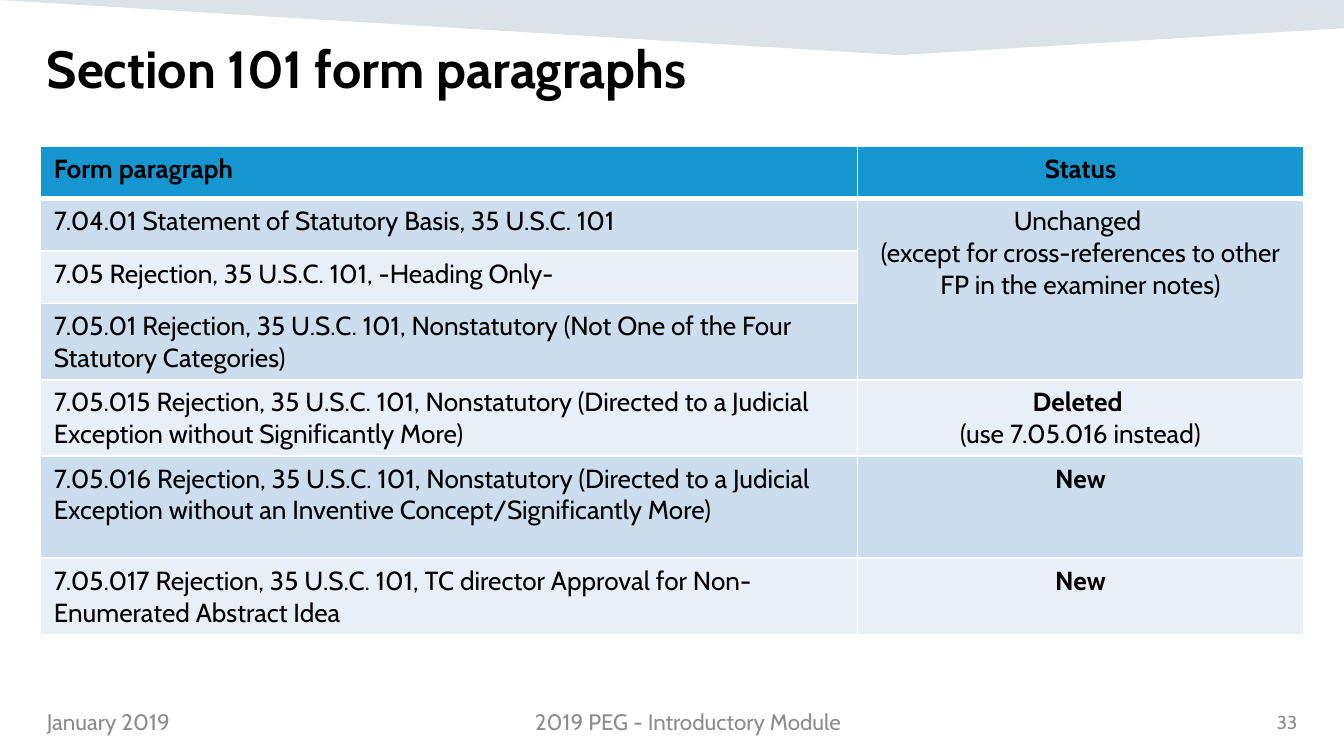
import copy

import lxml.etree
import pptx
import pptx.dml.color
import pptx.enum.text
import pptx.oxml.ns
import pptx.util

Inches = pptx.util.Inches
Pt = pptx.util.Pt
RGBColor = pptx.dml.color.RGBColor
ALIGN = pptx.enum.text.PP_ALIGN
ANCHOR = pptx.enum.text.MSO_ANCHOR
qn = pptx.oxml.ns.qn

FONT = "Cabin"
BLACK = RGBColor(0x00, 0x00, 0x00)
WHITE = RGBColor(0xFF, 0xFF, 0xFF)
GRAY = RGBColor(0x8C, 0x8C, 0x8C)
NAVY = RGBColor(0x16, 0x44, 0x69)
HEADER_BLUE = RGBColor(0x15, 0x96, 0xD1)
BANDS = (RGBColor(0xCC, 0xDD, 0xEE), RGBColor(0xE8, 0xEF, 0xF7))

SLIDE_WIDTH = 10
COL_WIDTHS = (6.08, 3.32)
ROW_HEIGHTS = (0.39, 0.39, 0.39, 0.54, 0.54, 0.76, 0.54)
HEADER = ("Form paragraph", "Status")
FORM_PARAGRAPHS = (
    "7.04.01 Statement of Statutory Basis, 35 U.S.C. 101",
    "7.05 Rejection, 35 U.S.C. 101, -Heading Only-",
    "7.05.01 Rejection, 35 U.S.C. 101, Nonstatutory "
    "(Not One of the Four Statutory Categories)",
    "7.05.015 Rejection, 35 U.S.C. 101, Nonstatutory "
    "(Directed to a Judicial Exception without Significantly More)",
    "7.05.016 Rejection, 35 U.S.C. 101, Nonstatutory (Directed to a Judicial "
    "Exception without an Inventive Concept/Significantly More)",
    "7.05.017 Rejection, 35 U.S.C. 101, TC director Approval "
    "for Non-Enumerated Abstract Idea",
)
STATUSES = {
    1: (("Unchanged \n(except for cross-references to other FP "
         "in the examiner notes)", False),),
    4: (("Deleted \n", True), ("(use 7.05.016 instead)", False)),
    5: (("New", True),),
    6: (("New", True),),
}


def add_text(p, text, size=14, color=BLACK, bold=False, align=ALIGN.LEFT):
    p.alignment = align
    for i, line in enumerate(text.split("\n")):
        if i:
            p.add_line_break()
            p._p[-1].append(copy.deepcopy(r._r.rPr))
        if line:
            r = p.add_run()
            r.text = line
            r.font.name = FONT
            r.font.size = Pt(size)
            r.font.bold = bold
            r.font.color.rgb = color


def add_label(slide, left, top, width, height, text, **fmt):
    box = slide.shapes.add_textbox(
        Inches(left), Inches(top), Inches(width), Inches(height))
    tf = box.text_frame
    tf.word_wrap = True
    tf.vertical_anchor = ANCHOR.MIDDLE
    add_text(tf.paragraphs[0], text, **fmt)


def add_banner(slide):
    builder = slide.shapes.build_freeform(0, 0)
    points = ((SLIDE_WIDTH, 0), (SLIDE_WIDTH, 0.21), (6.69, 0.41))
    builder.add_line_segments([(Inches(x), Inches(y)) for x, y in points])
    sp = builder.convert_to_shape()
    sp.shadow.inherit = False
    sp.line.fill.background()
    sp.fill.solid()
    sp.fill.fore_color.rgb = NAVY
    color = sp._element.spPr.find(".//" + qn("a:srgbClr"))
    lxml.etree.SubElement(color, qn("a:alpha"), val="15000")


def style_cell(cell, fill, top=1, bottom=1):
    tcPr = cell._tc.get_or_add_tcPr()
    for side, width in (("L", 1), ("R", 1), ("T", top), ("B", bottom)):
        ln = lxml.etree.SubElement(tcPr, qn("a:ln" + side), w=str(Pt(width)))
        solid = lxml.etree.SubElement(ln, qn("a:solidFill"))
        lxml.etree.SubElement(solid, qn("a:srgbClr"), val=str(WHITE))
    cell.fill.solid()
    cell.fill.fore_color.rgb = fill


def add_form_table(slide):
    table = slide.shapes.add_table(
        len(ROW_HEIGHTS), len(COL_WIDTHS), Inches(0.3), Inches(1.09),
        Inches(sum(COL_WIDTHS)), Inches(sum(ROW_HEIGHTS))).table
    for col, width in zip(table.columns, COL_WIDTHS):
        col.width = Inches(width)
    for i, height in enumerate(ROW_HEIGHTS):
        table.rows[i].height = Inches(height)
        fill = BANDS[(i - 1) % 2] if i else HEADER_BLUE
        for cell in table.rows[i].cells:
            style_cell(cell, fill, top=3 if i == 1 else 1,
                       bottom=1 if i else 3)
    table.cell(1, 1).merge(table.cell(3, 1))

    for j, (text, align) in enumerate(zip(HEADER, (ALIGN.LEFT, ALIGN.CENTER))):
        add_text(table.cell(0, j).text_frame.paragraphs[0], text,
                 bold=True, align=align)
    for i, text in enumerate(FORM_PARAGRAPHS, 1):
        add_text(table.cell(i, 0).text_frame.paragraphs[0], text)
    for i, parts in STATUSES.items():
        p = table.cell(i, 1).text_frame.paragraphs[0]
        for text, bold in parts:
            add_text(p, text, bold=bold, align=ALIGN.CENTER)


def main():
    prs = pptx.Presentation()
    prs.slide_width = Inches(SLIDE_WIDTH)
    prs.slide_height = Inches(SLIDE_WIDTH * 9 / 16)
    slide = prs.slides.add_slide(prs.slide_layouts[6])
    add_banner(slide)
    add_label(slide, 0.25, 0, 9.75, 1, "Section 101 form paragraphs",
              size=28, bold=True)
    add_form_table(slide)
    add_label(slide, 0.25, 5.22, 1.9, 0.3, "January 2019",
              size=12, color=GRAY)
    add_label(slide, 2.36, 5.22, 5.52, 0.3, "2019 PEG - Introductory Module",
              size=12, color=GRAY, align=ALIGN.CENTER)
    add_label(slide, 9.16, 5.22, 0.59, 0.3, "33",
              size=10, color=GRAY, align=ALIGN.RIGHT)
    prs.save("out.pptx")


if __name__ == "__main__":
    main()
